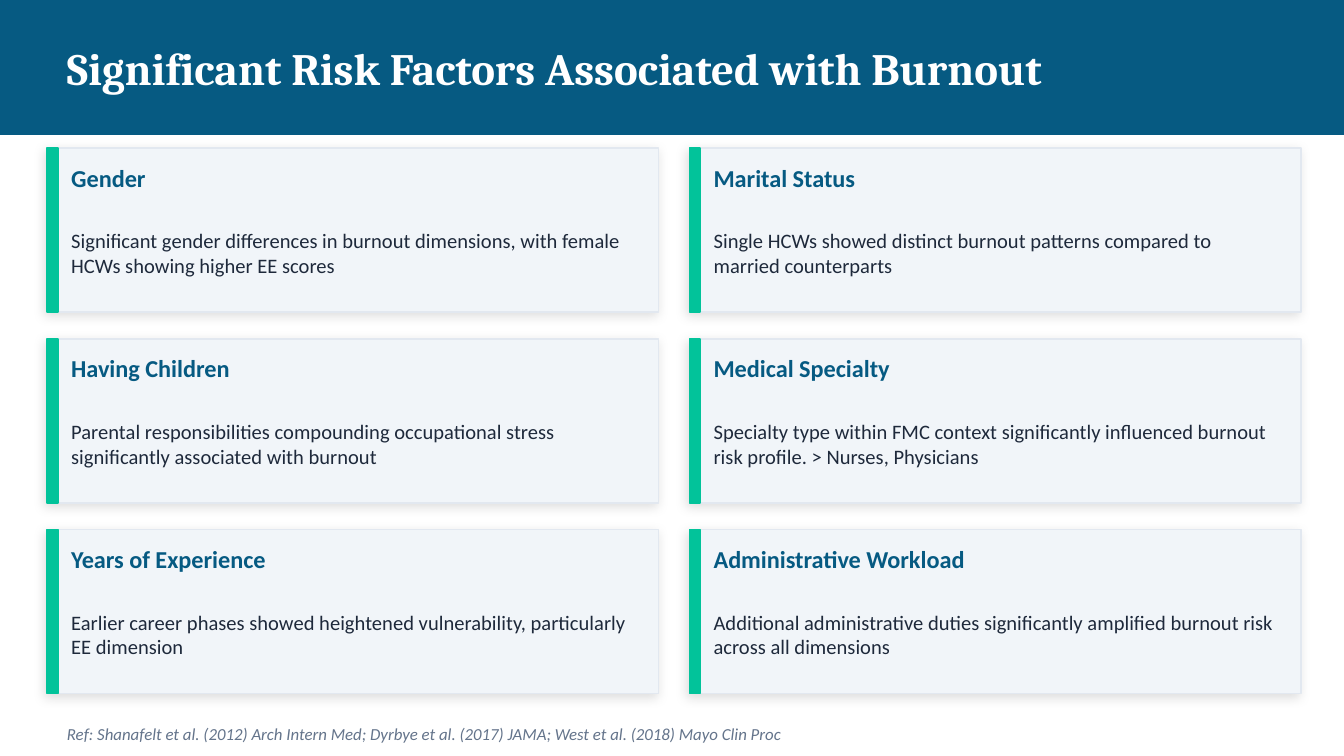
"""Build a slide of six risk-factor cards under a title band."""
from lxml import etree
from pptx import Presentation
from pptx.dml.color import RGBColor
from pptx.enum.shapes import MSO_SHAPE
from pptx.enum.text import MSO_ANCHOR
from pptx.oxml import parse_xml
from pptx.util import Pt

RECT = MSO_SHAPE.RECTANGLE
MIDDLE = MSO_ANCHOR.MIDDLE

THEME = {
    "band": "065A82",
    "card": "F1F5F9",
    "border": "E2E8F0",
    "accent": "02C39A",
    "title": {"name": "Cambria", "size": 24, "color": "FFFFFF", "bold": True},
    "heading": {"name": "Calibri", "size": 13, "color": "065A82", "bold": True},
    "body": {"name": "Calibri", "size": 11, "color": "1E293B"},
    "reference": {"name": "Calibri", "size": 9, "color": "64748B", "italic": True},
}

SHADOW = (
    '<a:effectLst xmlns:a="http://schemas.openxmlformats.org/drawingml/2006/main">'
    '<a:outerShdw blurRad="76200" dist="25400" dir="8100000" algn="bl" rotWithShape="0">'
    '<a:srgbClr val="000000"><a:alpha val="12000"/></a:srgbClr>'
    '</a:outerShdw></a:effectLst>'
)

FACTORS = [
    ("Gender", "Significant gender differences in burnout dimensions, with female HCWs showing higher EE scores"),
    ("Marital Status", "Single HCWs showed distinct burnout patterns compared to married counterparts"),
    ("Having Children", "Parental responsibilities compounding occupational stress significantly associated with burnout"),
    ("Medical Specialty", "Specialty type within FMC context significantly influenced burnout risk profile. > Nurses, Physicians"),
    ("Years of Experience", "Earlier career phases showed heightened vulnerability, particularly EE dimension"),
    ("Administrative Workload", "Additional administrative duties significantly amplified burnout risk across all dimensions"),
]
REFERENCE = "Ref: Shanafelt et al. (2012) Arch Intern Med; Dyrbye et al. (2017) JAMA; West et al. (2018) Mayo Clin Proc"

LEFT, TOP = 25.2, 79.2
CARD_W, CARD_H = 327.6, 87.84
COL_STEP, ROW_STEP = 344.16, 102.24

prs = Presentation()
prs.slide_width, prs.slide_height = Pt(720), Pt(405)
s = prs.slides.add_slide(prs.slide_layouts[6])


def add_rect(x, y, w, h, fill, line):
    sp = s.shapes.add_shape(RECT, Pt(x), Pt(y), Pt(w), Pt(h))
    sp.shadow.inherit = False
    sp.fill.solid()
    sp.fill.fore_color.rgb = RGBColor.from_string(THEME[fill])
    sp.line.color.rgb = RGBColor.from_string(THEME[line])
    sp.line.width = Pt(1)
    return sp


def add_text(x, y, w, h, text, style, inset=True):
    tf = s.shapes.add_textbox(Pt(x), Pt(y), Pt(w), Pt(h)).text_frame
    tf.word_wrap = True
    tf.vertical_anchor = MIDDLE
    if not inset:
        for side in ("left", "right", "top", "bottom"):
            setattr(tf, f"margin_{side}", Pt(0))
    r = tf.paragraphs[0].add_run()
    r.text = text
    for key, value in THEME[style].items():
        if key == "color":
            r.font.color.rgb = RGBColor.from_string(value)
        else:
            setattr(r.font, key, Pt(value) if key == "size" else value)


add_rect(0, 0, 720, 72, "band", "band")
add_text(28.8, 0, 662.4, 72, "Significant Risk Factors Associated with Burnout", "title")

for i, (heading, body) in enumerate(FACTORS):
    row, col = divmod(i, 2)
    x, y = LEFT + col * COL_STEP, TOP + row * ROW_STEP
    card = add_rect(x, y, CARD_W, CARD_H, "card", "border")
    effects = card.element.spPr.find("{*}effectLst")
    card.element.spPr.replace(effects, parse_xml(etree.tostring(etree.fromstring(SHADOW))))
    add_rect(x, y, 5.76, CARD_H, "accent", "accent")
    add_text(x + 12.96, y + 5.04, 302.4, 21.6, heading, "heading", inset=False)
    add_text(x + 12.96, y + 30.24, 302.4, 51.84, body, "body", inset=False)

add_text(28.8, 385.2, 662.4, 15.84, REFERENCE, "reference")

prs.save("out.pptx")
